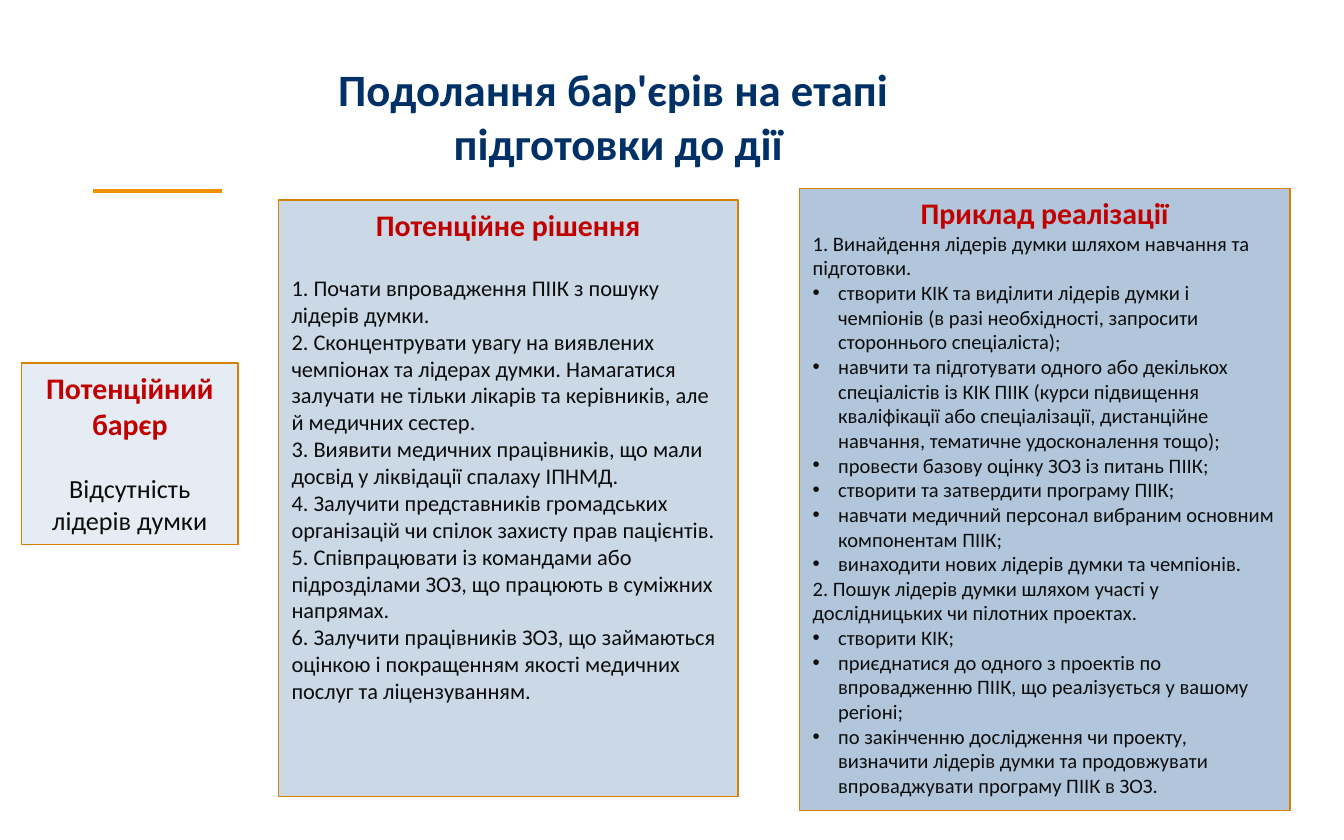
from dataclasses import dataclass

import pptx
import pptx.dml.color
import pptx.enum.shapes
import pptx.enum.text
import pptx.oxml
import pptx.oxml.ns
import pptx.util
from pptx.util import Cm, Pt

FONT = "Calibri"
COLORS = {
    "title": "003166",
    "heading": "C00000",
    "body": "0D0D0D",
    "accent": "F29100",
    "border": "D48105",
    "barrier": "E5ECF3",
    "solution": "CBD9E7",
    "example": "B1C6DB",
}
CENTER = pptx.enum.text.PP_ALIGN.CENTER
LEFT = pptx.enum.text.PP_ALIGN.LEFT


@dataclass
class Item:
    text: str
    bullet: bool = False


@dataclass
class Card:
    left: float
    top: float
    width: float
    height: float
    fill: str
    heading: str
    items: list[Item]
    size: int
    gap: float = 0  # points between heading and body
    align: int = LEFT


def rgb(name: str) -> pptx.dml.color.RGBColor:
    return pptx.dml.color.RGBColor.from_string(COLORS[name])


def add_run(p, text: str, size: float, color: str, bold: bool = False) -> None:
    r = p.add_run()
    r.text = text
    r.font.name = FONT
    r.font.size = Pt(size)
    r.font.bold = bold
    r.font.color.rgb = rgb(color)


def set_bullet(p) -> None:
    pPr = p._p.get_or_add_pPr()
    pPr.set("marL", str(Cm(0.48)))
    pPr.set("indent", str(-Cm(0.48)))
    for tag, key, value in (("a:buFont", "typeface", "Arial"), ("a:buChar", "char", "•")):
        element = pptx.oxml.ns.qn(tag)
        pPr.append(pPr.makeelement(element, {key: value}))


def add_title(s, lines: list[str]) -> None:
    tf = s.shapes.add_textbox(Cm(2.54), Cm(1.04), Cm(18.29), Cm(2.31)).text_frame
    tf.word_wrap = True
    for i, line in enumerate(lines):
        p = tf.add_paragraph() if i else tf.paragraphs[0]
        p.alignment = CENTER
        add_run(p, line, 24, "title", True)


def add_accent(s) -> None:
    line = s.shapes.add_connector(
        pptx.enum.shapes.MSO_CONNECTOR.STRAIGHT, Cm(1.75), Cm(3.61), Cm(4.19), Cm(3.61))
    line.line.color.rgb = rgb("accent")
    line.line.width = Pt(2)
    spPr = line._element.spPr
    spPr.append(spPr.makeelement(pptx.oxml.ns.qn("a:effectLst"), {}))


def add_card(s, card: Card) -> None:
    sp = s.shapes.add_shape(
        pptx.enum.shapes.MSO_SHAPE.RECTANGLE,
        Cm(card.left), Cm(card.top), Cm(card.width), Cm(card.height))
    sp.shadow.inherit = False
    sp.fill.solid()
    sp.fill.fore_color.rgb = rgb(card.fill)
    sp.line.color.rgb = rgb("border")
    sp.line.width = Pt(0.75)

    tf = sp.text_frame
    tf.word_wrap = True
    tf.vertical_anchor = pptx.enum.text.MSO_ANCHOR.TOP
    p = tf.paragraphs[0]
    p.alignment = CENTER
    p.space_after = Pt(card.gap)
    add_run(p, card.heading, 16, "heading", True)
    for item in card.items:
        p = tf.add_paragraph()
        p.alignment = card.align
        if item.bullet:
            set_bullet(p)
        add_run(p, item.text, card.size, "body")


CARDS = [
    Card(0.41, 6.86, 4.09, 3.43, "barrier", "Потенційний барєр",
         [Item("Відсутність лідерів думки")], 14, 17, CENTER),
    Card(5.26, 3.78, 8.69, 11.28, "solution", "Потенційне рішення", [
        Item("1. Почати впровадження ПІІК з пошуку лідерів думки."),
        Item("2. Сконцентрувати увагу на виявлених чемпіонах та лідерах думки. "
             "Намагатися залучати не тільки лікарів та керівників, але й медичних сестер."),
        Item("3. Виявити медичних працівників, що мали досвід у ліквідації спалаху ІПНМД."),
        Item("4. Залучити представників громадських організацій чи спілок захисту "
             "прав пацієнтів."),
        Item("5. Співпрацювати із командами або підрозділами ЗОЗ, що працюють "
             "в суміжних напрямах."),
        Item("6. Залучити працівників ЗОЗ, що займаються оцінкою і покращенням якості "
             "медичних послуг та ліцензуванням."),
    ], 12, 17),
    Card(15.11, 3.56, 9.27, 11.76, "example", "Приклад реалізації", [
        Item("1. Винайдення лідерів думки шляхом навчання та підготовки."),
        Item("створити КІК та виділити лідерів думки і чемпіонів (в разі необхідності, "
             "запросити стороннього спеціаліста);", True),
        Item("навчити та підготувати одного або декількох спеціалістів із КІК ПІІК "
             "(курси підвищення кваліфікації або спеціалізації, дистанційне навчання, "
             "тематичне удосконалення тощо);", True),
        Item("провести базову оцінку ЗОЗ із питань ПІІК;", True),
        Item("створити та затвердити програму ПІІК;", True),
        Item("навчати медичний персонал вибраним основним компонентам ПІІК;", True),
        Item("винаходити нових лідерів думки та чемпіонів.", True),
        Item("2. Пошук лідерів думки шляхом участі у дослідницьких чи пілотних проектах."),
        Item("створити КІК;", True),
        Item("приєднатися до одного з проектів по впровадженню ПІІК, що реалізується "
             "у вашому регіоні;", True),
        Item("по закінченню дослідження чи проекту, визначити лідерів думки та "
             "продовжувати впроваджувати програму ПІІК в ЗОЗ.", True),
    ], 11),
]


def main() -> None:
    prs = pptx.Presentation()
    prs.slide_width, prs.slide_height = Cm(25.4), Cm(15.88)
    s = prs.slides.add_slide(prs.slide_layouts[6])

    # Title and accent line
    add_accent(s)
    add_title(s, ["Подолання бар'єрів на етапі ", "підготовки до дії"])

    # Barrier, solution and example cards
    for card in CARDS:
        add_card(s, card)

    prs.save("out.pptx")


if __name__ == "__main__":
    main()
